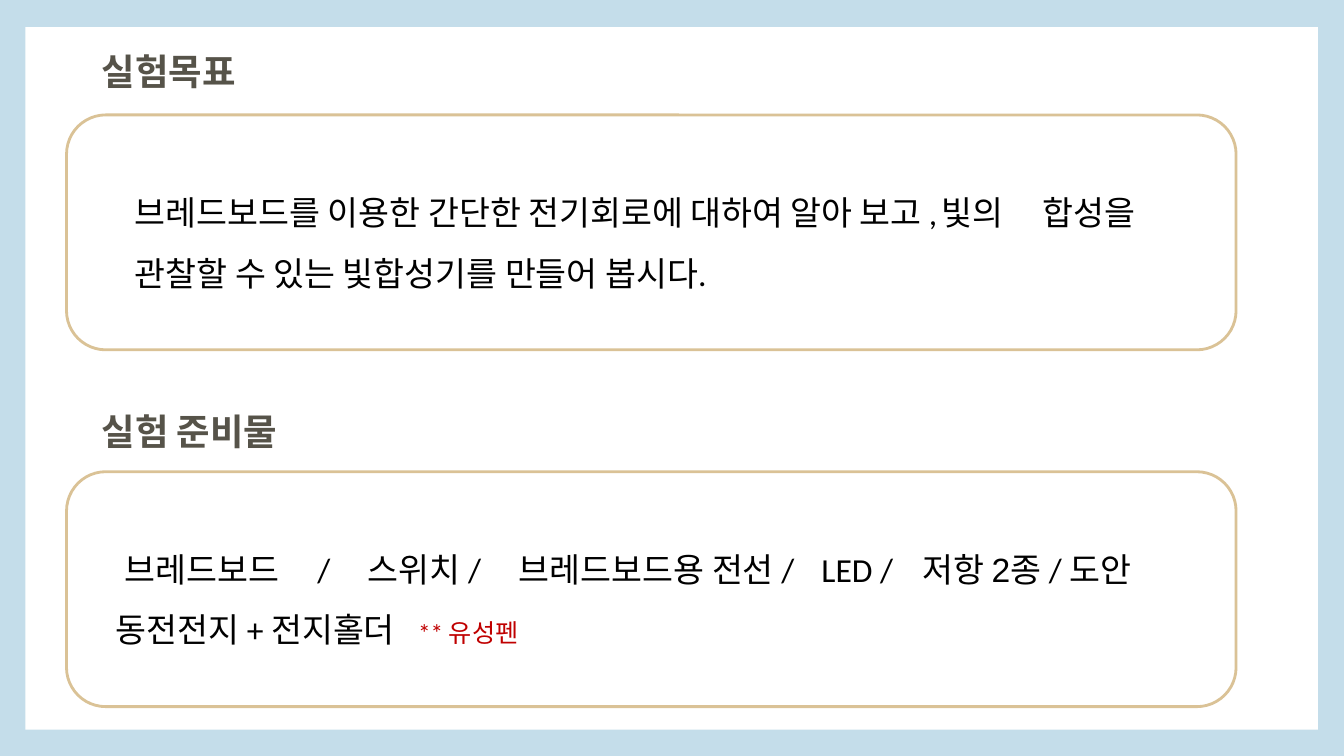
from lxml.etree import SubElement
from pptx import Presentation
from pptx.dml.color import RGBColor
from pptx.enum.shapes import MSO_SHAPE as Shape
from pptx.enum.text import MSO_ANCHOR as Anchor, MSO_AUTO_SIZE as AutoSize, PP_ALIGN as Align
from pptx.oxml.ns import qn
from pptx.util import Inches, Pt

WIDTH, HEIGHT = Inches(13.33), Inches(7.5)
SKY = RGBColor(0xC4, 0xDD, 0xEA)
WHITE = RGBColor(0xFF, 0xFF, 0xFF)
SAND = RGBColor(0xDA, 0xC2, 0x96)
OLIVE = RGBColor(0x56, 0x53, 0x49)
BLACK = RGBColor(0, 0, 0)
RED = RGBColor(0xC0, 0, 0)

# Percentages of the slide's width or height
HEADING_LEFT = 6.83
CARD_LEFT, CARD_WIDTH, CARD_HEIGHT = 4.95, 87.02, 31.07
CORNER_INSET = 0.05  # text inset of a rounded rectangle, share of its height

BODY = ("Calibri", 24, BLACK)
DIGITS = ("Arial", 24, BLACK)
NOTE = ("Calibri", 18, RED)


def across(percent):
    return int(WIDTH * percent / 100)


def down(percent):
    return int(HEIGHT * percent / 100)


def style(span, font, size, color, bold=False):
    span.font.name = font
    span.font.size = Pt(size)
    span.font.color.rgb = color
    span.font.bold = bold


def plain_shape(page, kind, left, top, width, height):
    shape = page.shapes.add_shape(kind, left, top, width, height)
    shape.shadow.inherit = False
    shape.fill.solid()
    shape.fill.fore_color.rgb = WHITE
    shape.line.fill.background()
    return shape


def format_heading(box, text, top, width):
    box.left, box.top = across(HEADING_LEFT), down(top)
    box.width, box.height = across(width), down(6.4)
    frame = box.text_frame
    frame.text = text
    frame.word_wrap = True
    frame.auto_size = AutoSize.NONE
    frame.vertical_anchor = Anchor.TOP
    frame.margin_left = frame.margin_right = Inches(0.1)
    frame.margin_top = frame.margin_bottom = Inches(0.1)
    para = frame.paragraphs[0]
    para.alignment = Align.LEFT
    style(para.runs[0], "Calibri", 26, OLIVE, bold=True)


def add_tab_stops(para, stops, text_left):
    """Set left tab stops, given as percentages across the slide."""
    tabs = SubElement(para._p.get_or_add_pPr(), qn("a:tabLst"))
    for stop in stops:
        SubElement(tabs, qn("a:tab"), pos=str(across(stop - text_left)), algn="l")


def add_card(page, top, text_left, lines):
    """Add a rounded card; each line is (first indent, tab stops, styled spans)."""
    card = plain_shape(page, Shape.ROUNDED_RECTANGLE, across(CARD_LEFT), down(top),
                       across(CARD_WIDTH), down(CARD_HEIGHT))
    card.line.color.rgb = SAND
    card.line.width = Pt(2)
    frame = card.text_frame
    frame.word_wrap = True
    frame.vertical_anchor = Anchor.MIDDLE
    frame.margin_left = across(text_left - CARD_LEFT) - int(card.height * CORNER_INSET)
    for number, (indent, stops, spans) in enumerate(lines):
        para = frame.add_paragraph() if number else frame.paragraphs[0]
        para.alignment = Align.LEFT
        para.line_spacing = 1.5
        para._p.get_or_add_pPr().set("indent", str(across(indent)))
        add_tab_stops(para, stops, text_left)
        for text, look in spans:
            span = para.add_run()
            span.text = text
            style(span, *look)


def main():
    deck = Presentation()
    deck.slide_width, deck.slide_height = WIDTH, HEIGHT
    page = deck.slides.add_slide(deck.slide_layouts[5])
    page.background.fill.solid()
    page.background.fill.fore_color.rgb = SKY

    title = page.shapes.title
    panel = plain_shape(page, Shape.RECTANGLE, across(1.88), down(3.6),
                        across(96.17), down(92.93))
    title._element.addprevious(panel._element)

    format_heading(title, "실험목표", 5.2, 14.7)
    add_card(page, 15.2, 10.05, [
        (0, [60.2, 73.8, 79.8],
         [("브레드보드를 이용한 간단한 전기회로에 대하여\t알아 보고 ,\t빛의\t합성을", BODY)]),
        (0, [], [("관찰할 수 있는 빛합성기를 만들어 봅시다.", BODY)]),
    ])

    format_heading(page.shapes.add_textbox(0, 0, 0, 0), "실험 준비물", 52.8, 17.25)
    add_card(page, 62.4, 8.63, [
        (0.68, [22.9, 26.1, 37.6, 60, 67.1],
         [("브레드보드\t/\t스위치 /\t브레드보드용 전선 /\tLED /\t", BODY),
          ("저항 2", DIGITS), ("종 / 도안", BODY)]),
        (0, [36.4], [("동전전지 + 전지홀더\t", BODY), ("** 유성펜", NOTE)]),
    ])
    deck.save("out.pptx")


if __name__ == "__main__":
    main()
